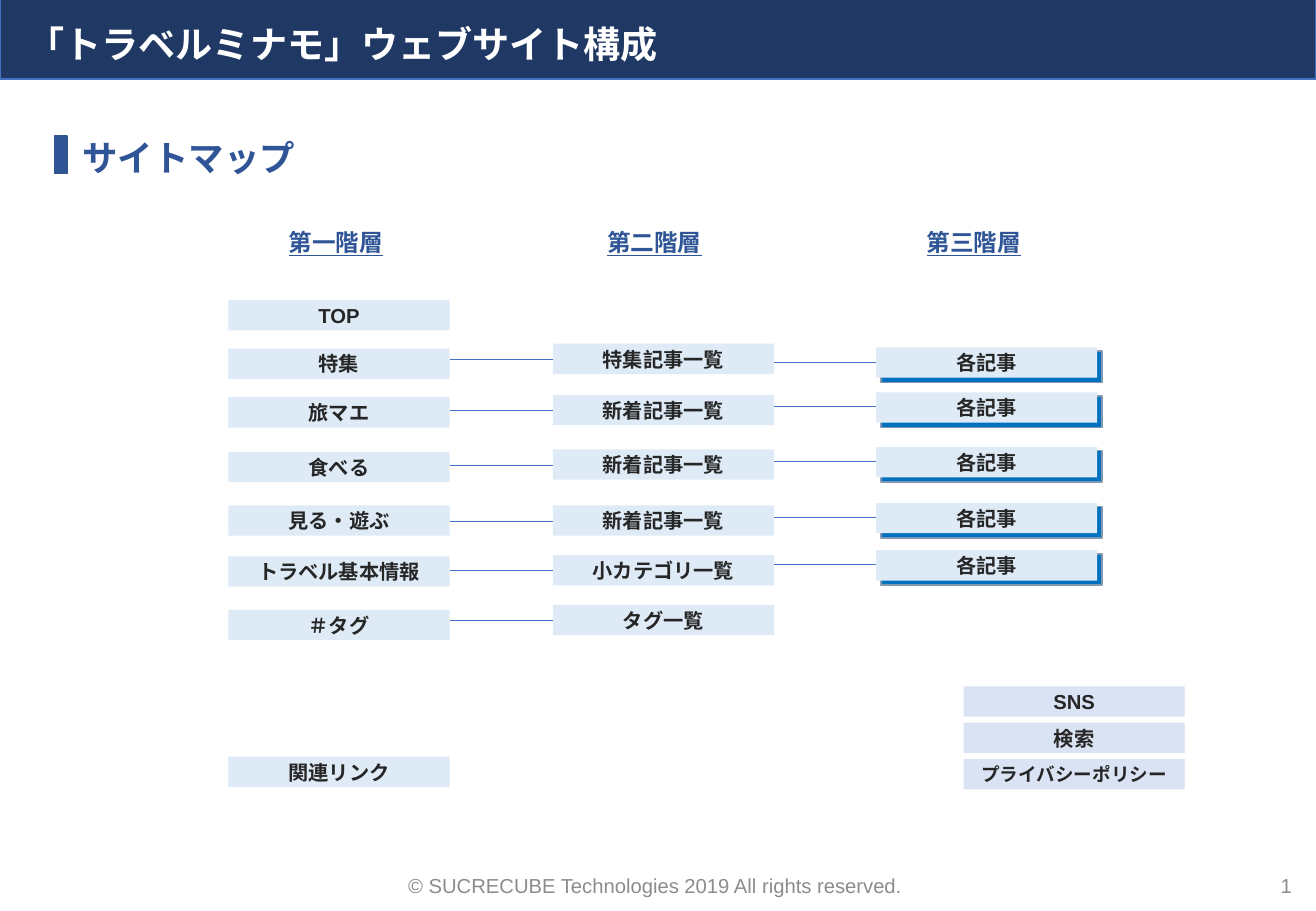
from lxml import etree
from pptx import Presentation
from pptx import util as u
from pptx.dml.color import RGBColor
from pptx.enum import shapes, text
from pptx.oxml.ns import qn

HEX = {
    "navy": "203864", "blue": "4472C4", "deep": "2F5597", "edge": "325491",
    "pale": "DEEBF7", "lilac": "DAE3F3", "stack": "0070C0", "rim": "8497B0",
    "ink": "262626", "gray": "8C8C8C", "white": "FFFFFF",
}
ALIGN = text.PP_ALIGN
ANCHOR = text.MSO_ANCHOR
WIDE, HIGH = 1.82, 0.25
COLS = (1.88, 4.55, 7.21)

LEVEL1 = [("TOP", 2.47), ("特集", 2.87), ("旅マエ", 3.27), ("食べる", 3.72),
          ("見る・遊ぶ", 4.16), ("トラベル基本情報", 4.58), ("＃タグ", 5.02)]
LEVEL2 = [("特集記事一覧", 2.83), ("新着記事一覧", 3.25), ("新着記事一覧", 3.7),
          ("新着記事一覧", 4.16), ("小カテゴリ一覧", 4.57), ("タグ一覧", 4.98)]
LEVEL3 = [2.86, 3.23, 3.68, 4.14, 4.53]
TOOLS = [("SNS", 12), ("検索", 12), ("プライバシーポリシー", 11)]


def color(name):
    return RGBColor.from_string(HEX[name])


class Deck:
    """Holds the style and the current slide."""

    font = "Arial"

    def __init__(self, wide, high):
        self.prs = Presentation()
        self.prs.slide_width = u.Inches(wide)
        self.prs.slide_height = u.Inches(high)
        self.slide = self.prs.slides.add_slide(self.prs.slide_layouts[6])

    def letter(self, shape, words, size, ink, align=ALIGN.CENTER,
               anchor=ANCHOR.MIDDLE, wrap=True, space=None, **looks):
        """Put styled words into a shape."""
        frame = shape.text_frame
        frame.word_wrap = wrap
        frame.vertical_anchor = anchor
        para = frame.paragraphs[0]
        para.alignment = align
        para.line_spacing = space
        run = para.add_run()
        run.text = words
        looks = {"name": self.font, "size": u.Pt(size), **looks}
        for key, value in looks.items():
            setattr(run.font, key, value)
        run.font.color.rgb = color(ink)

    def label(self, spot, words, size, ink, **looks):
        box = self.slide.shapes.add_textbox(*map(u.Inches, spot))
        self.letter(box, words, size, ink, **looks)

    def rect(self, spot, fill, line=None):
        shape = self.slide.shapes.add_shape(
            shapes.MSO_SHAPE.RECTANGLE, *map(u.Inches, spot))
        shape.shadow.inherit = False
        shape.fill.solid()
        shape.fill.fore_color.rgb = color(fill)
        if line:
            shape.line.color.rgb = color(line)
            shape.line.width = u.Pt(1)
        else:
            shape.line.fill.background()
        return shape

    def page(self, left, top, words, fill="pale", size=12):
        """Draw one box that stands for a page of the site."""
        shape = self.rect((left, top, WIDE, HIGH), fill)
        self.letter(shape, words, size, "ink", bold=True)

    def link(self, col, y):
        """Join the boxes of column col to the next column."""
        ends = (COLS[col] + WIDE, y, COLS[col + 1], y)
        line = self.slide.shapes.add_connector(
            shapes.MSO_CONNECTOR.STRAIGHT, *map(u.Inches, ends))
        line.line.color.rgb = color("blue")
        line.line.width = u.Pt(0.5)
        etree.SubElement(line._element.spPr, qn("a:effectLst"))


def main():
    deck = Deck(10.83, 7.5)
    deck.rect((0, -0.02, 10.83, 0.67), "navy", "blue")
    deck.label((0.13, 0.07, 10.63, 0.53), "「トラベルミナモ」ウェブサイト構成",
               22, "white", align=ALIGN.LEFT, anchor=ANCHOR.BOTTOM,
               space=0.9, bold=True)
    deck.rect((0.45, 1.12, 0.1, 0.31), "deep", "edge")
    deck.label((0.58, 1.07, 1.97, 0.45), "サイトマップ", 21, "deep",
               align=ALIGN.LEFT, anchor=ANCHOR.TOP, wrap=False, bold=True)

    for left, rank in zip((2.27, 4.89, 7.52), "一二三"):
        deck.label((left, 1.83, 0.99, 0.34), f"第{rank}階層", 14, "deep",
                   anchor=ANCHOR.TOP, wrap=False, bold=True, underline=True)

    for words, top in LEVEL1:
        deck.page(COLS[0], top, words)
    for words, top in LEVEL2:
        deck.page(COLS[1], top, words)
        deck.link(0, top + 0.13)
    for top in LEVEL3:
        deck.rect((COLS[2] + 0.04, top + 0.03, WIDE, 0.26), "stack", "rim")
        deck.page(COLS[2], top, "各記事")
        deck.link(1, top + 0.12)

    deck.page(COLS[0], 6.23, "関連リンク")
    for row, (words, size) in enumerate(TOOLS):
        deck.page(7.93, 5.65 + 0.3 * row, words, "lilac", size)

    deck.label((3.15, 7.09, 4.53, 0.4),
               "© SUCRECUBE Technologies 2019 All rights reserved. ", 12, "gray")
    deck.label((10.27, 7.09, 0.46, 0.4), "1", 12, "gray", align=ALIGN.RIGHT)
    deck.prs.save("out.pptx")


if __name__ == "__main__":
    main()
